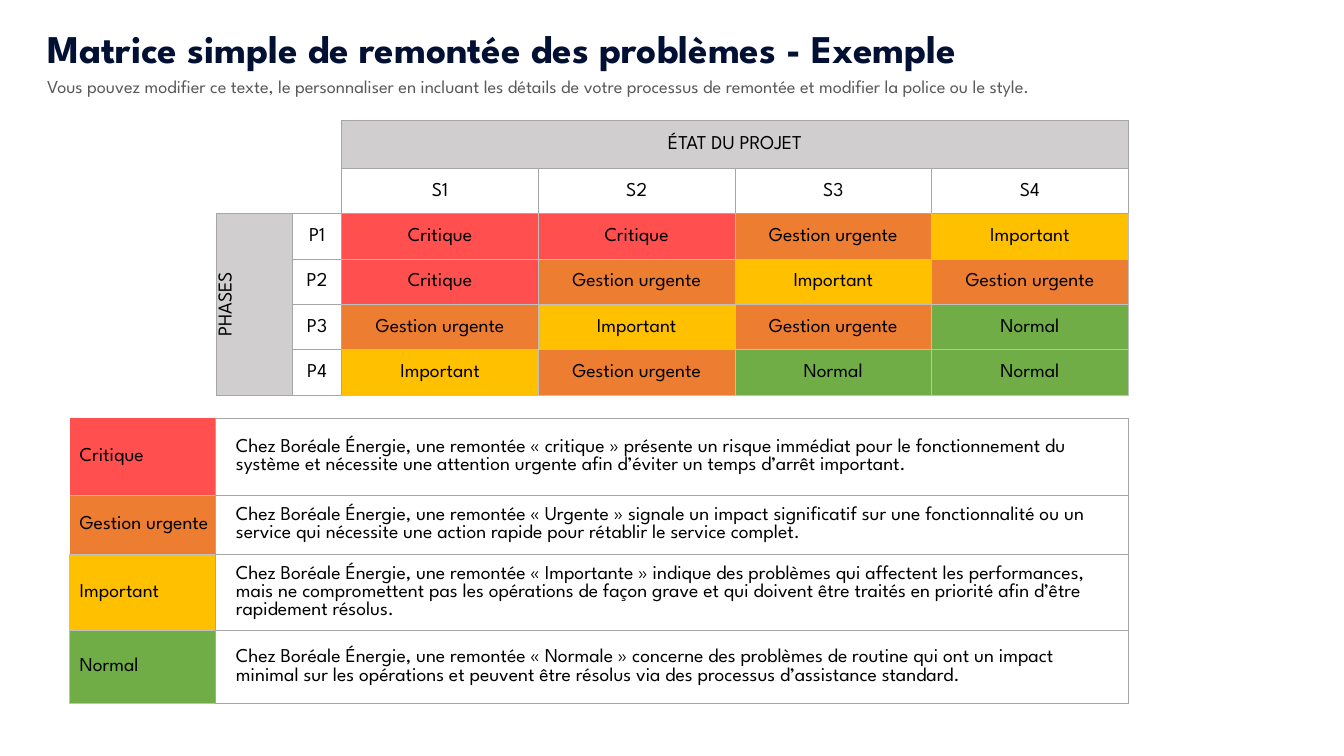
"""Build the escalation matrix slide with its table of level definitions."""
from lxml import etree
from pptx import Presentation
from pptx.dml.color import RGBColor
from pptx.enum.text import MSO_ANCHOR, MSO_AUTO_SIZE, PP_ALIGN
from pptx.oxml.ns import qn
from pptx.util import Inches, Pt

MID = MSO_ANCHOR.MIDDLE
GROW = MSO_AUTO_SIZE.SHAPE_TO_FIT_TEXT
LEFT, CENTER = PP_ALIGN.LEFT, PP_ALIGN.CENTER
FONT = "League Spartan"
BLACK, WHITE, HEAD = "000000", "FFFFFF", "D0CECE"
GREY, SOFT = "A6A6A6", "BFBFBF"
FRAME = dict.fromkeys("LRTB", GREY)
PLAIN = "{2D5ABB26-0587-4C30-8999-92F81FD0307C}"
LEVELS = {
    "Critique": "FF4F4F",
    "Gestion urgente": "ED7D31",
    "Important": "FFC000",
    "Normal": "70AD47",
}


def write(para, text, size=14, tint=BLACK, bold=False):
    run = para.add_run()
    run.text = text
    run.font.name = FONT
    run.font.size = Pt(size)
    run.font.bold = bold
    run.font.color.rgb = RGBColor.from_string(tint)


def dress(cell, text, fill, edges, align=CENTER, left=0.01, right=0.01):
    props = cell._tc.get_or_add_tcPr()
    for side in "LRTB":
        if side in edges:
            line = etree.SubElement(props, qn("a:ln" + side), w=str(Pt(0.5)))
            solid = etree.SubElement(line, qn("a:solidFill"))
            etree.SubElement(solid, qn("a:srgbClr"), val=edges[side])
    if fill:
        cell.fill.solid()
        cell.fill.fore_color.rgb = RGBColor.from_string(fill)
    cell.vertical_anchor = MID
    cell.margin_left, cell.margin_right = Inches(left), Inches(right)
    cell.margin_top, cell.margin_bottom = Inches(0.01), Inches(0)
    if text:
        para = cell.text_frame.paragraphs[0]
        para.alignment = align
        write(para, text)


deck = Presentation()
deck.slide_width, deck.slide_height = Inches(13.33), Inches(7.5)
slide = deck.slides.add_slide(deck.slide_layouts[6])

titles = [
    (0.19, 11.19, 0.57, "Matrice simple de remontée des problèmes - Exemple", 28, "011033", True),
    (0.7, 12.16, 0.32, "Vous pouvez modifier ce texte, le personnaliser en incluant les détails "
     "de votre processus de remontée et modifier la police ou le style.", 13, "595959", False),
]
for top, width, height, text, size, tint, bold in titles:
    box = slide.shapes.add_textbox(Inches(0.37), Inches(top), Inches(width), Inches(height))
    box.text_frame.word_wrap = True
    box.text_frame.auto_size = GROW
    write(box.text_frame.paragraphs[0], text, size, tint, bold)

tables = []
for left, top, cols, rows in [
    (2.15, 1.19, [0.75, 0.49] + [1.95] * 4, [0.48] + [0.45] * 5),
    (0.69, 4.15, [1.45, 9.05], [0.76, 0.59, 0.75, 0.73]),
]:
    table = slide.shapes.add_table(len(rows), len(cols), Inches(left), Inches(top),
                                   Inches(sum(cols)), Inches(sum(rows))).table
    table.first_row = table.horz_banding = False
    table._tbl.tblPr.find(qn("a:tableStyleId")).text = PLAIN
    for col, width in zip(table.columns, cols):
        col.width = Inches(width)
    for row, height in zip(table.rows, rows):
        row.height = Inches(height)
    tables.append(table)
matrix, legend = tables

matrix.cell(0, 2).merge(matrix.cell(0, 5))
matrix.cell(2, 0).merge(matrix.cell(5, 0))
dress(matrix.cell(0, 0), "", None, {})
dress(matrix.cell(0, 1), "", None, {"R": GREY})
dress(matrix.cell(1, 0), "", WHITE, {"B": GREY})
dress(matrix.cell(1, 1), "", WHITE, {"R": GREY, "B": GREY})
for i in range(4):
    dress(matrix.cell(0, i + 2), "" if i else "ÉTAT DU PROJET", HEAD, FRAME)
    dress(matrix.cell(1, i + 2), f"S{i + 1}", WHITE, FRAME)
    dress(matrix.cell(i + 2, 0), "" if i else "PHASES", HEAD, FRAME)
    dress(matrix.cell(i + 2, 1), f"P{i + 1}", WHITE, FRAME)
matrix.cell(2, 0)._tc.get_or_add_tcPr().set("vert", "vert270")

grid = [
    ["Critique", "Critique", "Gestion urgente", "Important"],
    ["Critique", "Gestion urgente", "Important", "Gestion urgente"],
    ["Gestion urgente", "Important", "Gestion urgente", "Normal"],
    ["Important", "Gestion urgente", "Normal", "Normal"],
]
for i, names in enumerate(grid):
    for j, name in enumerate(names):
        edges = {"L": SOFT if j else GREY, "T": SOFT if i else GREY, "R": SOFT, "B": SOFT}
        dress(matrix.cell(i + 2, j + 2), name, LEVELS[name], edges)

notes = [
    "Chez Boréale Énergie, une remontée « critique » présente un risque immédiat pour le "
    "fonctionnement du système et nécessite une attention urgente afin d’éviter un temps "
    "d’arrêt important.",
    "Chez Boréale Énergie, une remontée « Urgente » signale un impact significatif sur une "
    "fonctionnalité ou un service qui nécessite une action rapide pour rétablir le service "
    "complet.",
    "Chez Boréale Énergie, une remontée « Importante » indique des problèmes qui affectent "
    "les performances, mais ne compromettent pas les opérations de façon grave et qui doivent "
    "être traités en priorité afin d’être rapidement résolus.",
    "Chez Boréale Énergie, une remontée « Normale » concerne des problèmes de routine qui ont "
    "un impact minimal sur les opérations et peuvent être résolus via des processus "
    "d’assistance standard.",
]
for i, (name, note) in enumerate(zip(LEVELS, notes)):
    edges = {"R": GREY, "B": SOFT}
    if i > 0:
        edges["T"] = SOFT
    if i > 1:
        edges["L"] = SOFT
    dress(legend.cell(i, 0), name, LEVELS[name], edges, LEFT, 0.1)
    dress(legend.cell(i, 1), note, None, FRAME, LEFT, 0.2, 0.1)

deck.save("out.pptx")
